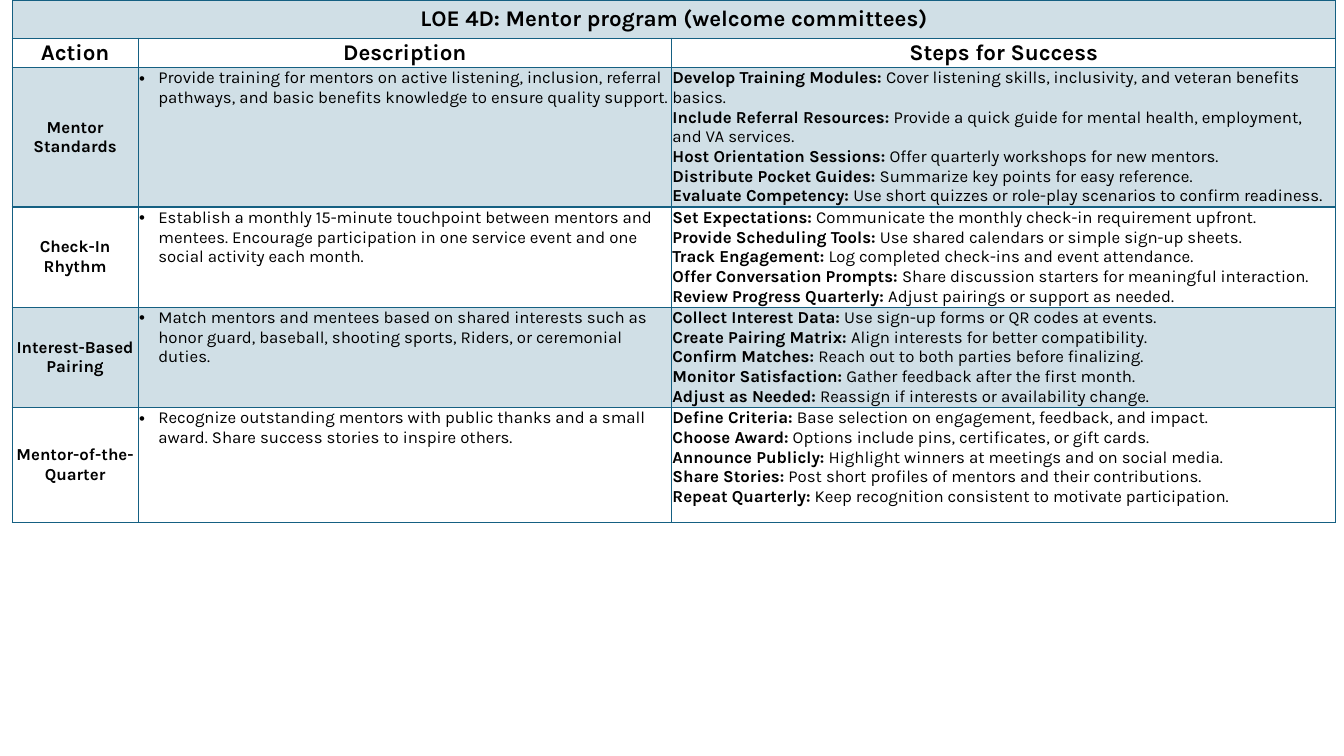
import pptx
import pptx.util
import pptx.dml.color
import pptx.enum.text
import pptx.oxml
import pptx.oxml.ns

FONT, TEAL, BLACK = "Karla", "156082", "000000"
TINT = 20  # opacity of shaded rows, per cent
COLS = [1.25, 5.29, 6.59]
ROWS = [0.38, 0.29, 1.14, 0.95, 0.95, 1.14]
TITLE = "LOE 4D: Mentor program (welcome committees)"
HEADINGS = ["Action", "Description", "Steps for Success"]
ACTIONS = [
    ("Mentor Standards",
     "Provide training for mentors on active listening, inclusion, referral pathways, "
     "and basic benefits knowledge to ensure quality support.",
     ["Develop Training Modules: Cover listening skills, inclusivity, and veteran benefits basics.",
      "Include Referral Resources: Provide a quick guide for mental health, employment, and VA services.",
      "Host Orientation Sessions: Offer quarterly workshops for new mentors.",
      "Distribute Pocket Guides: Summarize key points for easy reference.",
      "Evaluate Competency: Use short quizzes or role-play scenarios to confirm readiness."]),
    ("Check-In Rhythm",
     "Establish a monthly 15-minute touchpoint between mentors and mentees. Encourage "
     "participation in one service event and one social activity each month.",
     ["Set Expectations: Communicate the monthly check-in requirement upfront.",
      "Provide Scheduling Tools: Use shared calendars or simple sign-up sheets.",
      "Track Engagement: Log completed check-ins and event attendance.",
      "Offer Conversation Prompts: Share discussion starters for meaningful interaction.",
      "Review Progress Quarterly: Adjust pairings or support as needed."]),
    ("Interest-Based Pairing",
     "Match mentors and mentees based on shared interests such as honor guard, baseball, "
     "shooting sports, Riders, or ceremonial duties.",
     ["Collect Interest Data: Use sign-up forms or QR codes at events.",
      "Create Pairing Matrix: Align interests for better compatibility.",
      "Confirm Matches: Reach out to both parties before finalizing.",
      "Monitor Satisfaction: Gather feedback after the first month.",
      "Adjust as Needed: Reassign if interests or availability change."]),
    ("Mentor-of-the-Quarter",
     "Recognize outstanding mentors with public thanks and a small award. Share success "
     "stories to inspire others.",
     ["Define Criteria: Base selection on engagement, feedback, and impact.",
      "Choose Award: Options include pins, certificates, or gift cards.",
      "Announce Publicly: Highlight winners at meetings and on social media.",
      "Share Stories: Post short profiles of mentors and their contributions.",
      "Repeat Quarterly: Keep recognition consistent to motivate participation."]),
]


def inches(value):
    return pptx.util.Inches(value)


def rgb(value):
    return pptx.dml.color.RGBColor.from_string(value)


def add_xml(parent, xml):
    ns = pptx.oxml.ns.nsdecls("a")
    parent.append(pptx.oxml.parse_xml(xml.replace("/>", f" {ns}/>", 1) if xml.endswith("/>")
                                      else xml.replace(">", f" {ns}>", 1)))


def style_run(r, size, bold):
    r.font.name, r.font.size, r.font.bold = FONT, pptx.util.Pt(size), bold
    r.font.color.rgb = rgb(BLACK)


def style_cell(cell, shaded):
    """Thin insets, teal borders and an optional tint."""
    cell.margin_left = cell.margin_right = cell.margin_top = cell.margin_bottom = inches(0.01)
    tc_pr = cell._tc.get_or_add_tcPr()
    for side in "LRTB":
        add_xml(tc_pr, f'<a:ln{side} w="{pptx.util.Pt(1)}"><a:solidFill><a:srgbClr val="{TEAL}"/>'
                       f'</a:solidFill></a:ln{side}>')
    if shaded:
        cell.fill.solid()
        cell.fill.fore_color.rgb = rgb(TEAL)
        color = tc_pr.find(pptx.oxml.ns.qn("a:solidFill"))[0]
        add_xml(color, f'<a:alpha val="{TINT * 1000}"/>')
    else:
        cell.fill.background()


def label(cell, text, size):
    """Bold text centred both ways."""
    cell.vertical_anchor = pptx.enum.text.MSO_ANCHOR.MIDDLE
    p = cell.text_frame.paragraphs[0]
    p.text = text
    p.alignment = pptx.enum.text.PP_ALIGN.CENTER
    style_run(p.runs[0], size, True)


def description(cell, text):
    p = cell.text_frame.paragraphs[0]
    p.text = text
    p_pr = p._p.get_or_add_pPr()
    p_pr.set("marL", str(inches(0.19)))
    p_pr.set("indent", str(inches(-0.19)))
    add_xml(p_pr, '<a:buFont typeface="Arial"/>')
    add_xml(p_pr, '<a:buChar char="•"/>')
    style_run(p.runs[0], 12, False)


def steps(cell, lines):
    """One paragraph per step, bold up to the colon."""
    tf = cell.text_frame
    for i, line in enumerate(lines):
        p = tf.add_paragraph() if i else tf.paragraphs[0]
        name, detail = line.split(":", 1)
        for text, bold in ((name + ":", True), (detail, False)):
            r = p.add_run()
            r.text = text
            style_run(r, 12, bold)


def action_table(s, left, top):
    frame = s.shapes.add_table(len(ROWS), len(COLS), inches(left), inches(top),
                               inches(sum(COLS)), inches(sum(ROWS)))
    table = frame.table
    table.first_row = table.horz_banding = False
    for column, width in zip(table.columns, COLS):
        column.width = inches(width)
    for i, (row, height) in enumerate(zip(table.rows, ROWS)):
        row.height = inches(height)
        for cell in row.cells:
            style_cell(cell, shaded=i % 2 == 0)

    # Title and headings
    table.cell(0, 0).merge(table.cell(0, len(COLS) - 1))
    label(table.cell(0, 0), TITLE, 16)
    for j, heading in enumerate(HEADINGS):
        label(table.cell(1, j), heading, 16)

    # Actions
    for i, (action, about, lines) in enumerate(ACTIONS, start=2):
        label(table.cell(i, 0), action, 12)
        description(table.cell(i, 1), about)
        steps(table.cell(i, 2), lines)


def main():
    prs = pptx.Presentation()
    prs.slide_width, prs.slide_height = inches(13.33), inches(7.5)
    s = prs.slides.add_slide(prs.slide_layouts[6])
    action_table(s, 0.12, 0)
    prs.save("out.pptx")


if __name__ == "__main__":
    main()
